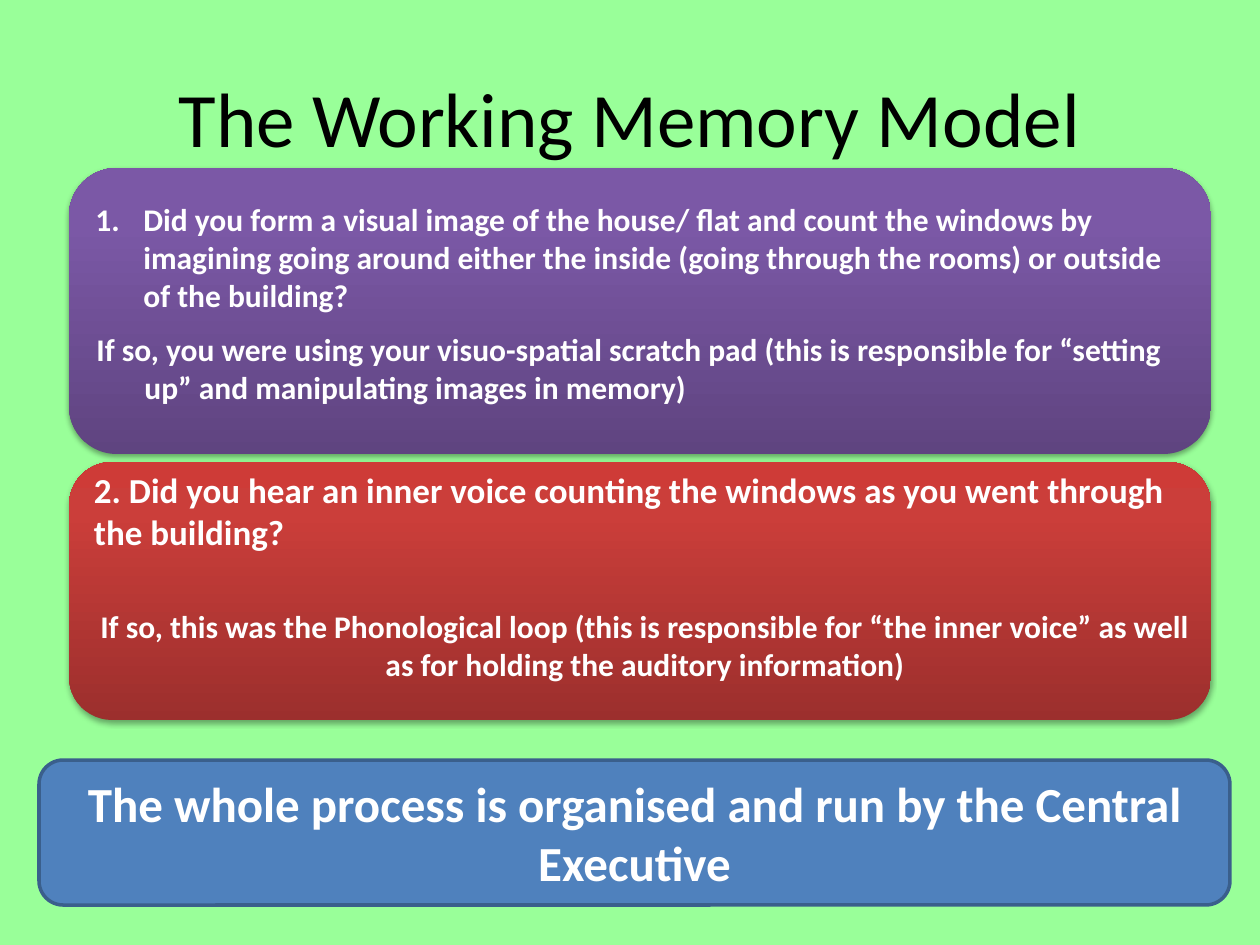
from copy import deepcopy

from lxml.etree import SubElement
from pptx import Presentation
from pptx.dml.color import RGBColor
from pptx.enum.shapes import MSO_SHAPE
from pptx.enum.text import MSO_ANCHOR, PP_ALIGN
from pptx.oxml.ns import qn
from pptx.util import Pt

EMU_PER_PX = 914400 / 126
COLORS = {
    "background": "99FF99",
    "title": "000000",
    "text": "FFFFFF",
    "shadow": "000000",
    "central": "4F81BD",
    "central_edge": "3A5F8C",
}
GRADIENTS = {
    "visual": ((0, "5F4480"), (0.8, "7B58A6"), (1, "7C57A8")),
    "sound": ((0, "9C2F2D"), (0.8, "CB3E3A"), (1, "CE3B37")),
}
HANGING = 48


def px(length):
    return round(length * EMU_PER_PX)


def rgb(name):
    return RGBColor.from_string(COLORS[name])


class MemorySlide:
    """Holds the style and the slide, and draws each kind of element."""

    def __init__(self, presentation):
        self.font = "Calibri"
        self.slide = presentation.slides.add_slide(presentation.slide_layouts[6])
        background = self.slide.background.fill
        background.solid()
        background.fore_color.rgb = rgb("background")

    def set_text(self, shape, text, size, align, color="text", bold=True,
                 anchor=MSO_ANCHOR.MIDDLE, hanging=0, numbered=False):
        frame = shape.text_frame
        frame.word_wrap = True
        frame.vertical_anchor = anchor
        paragraph = frame.paragraphs[0]
        paragraph.text = text
        paragraph.alignment = align
        font = paragraph.font
        font.name, font.size, font.bold = self.font, Pt(size), bold
        font.color.rgb = rgb(color)
        properties = paragraph._p.get_or_add_pPr()
        if hanging:
            properties.set("marL", str(px(hanging)))
            properties.set("indent", str(-px(hanging)))
        if numbered:
            number = SubElement(properties, qn("a:buAutoNum"), type="arabicPeriod")
            properties.remove(number)
            properties.insert_element_before(number, "a:defRPr")

    def text(self, box, text, size, align, **style):
        shape = self.slide.shapes.add_textbox(*map(px, box))
        self.set_text(shape, text, size, align, **style)

    def panel(self, box):
        shape = self.slide.shapes.add_shape(
            MSO_SHAPE.ROUNDED_RECTANGLE, *map(px, box))
        shape.shadow.inherit = False
        return shape

    def question(self, box, gradient, text, size, top, bottom, anchor, **style):
        shape = self.panel(box)
        shape.line.fill.background()
        self.shade(shape.fill, GRADIENTS[gradient])
        self.cast_shadow(shape)
        shape.text_frame.margin_top = px(top)
        shape.text_frame.margin_bottom = px(bottom)
        self.set_text(shape, text, size, PP_ALIGN.LEFT, anchor=anchor, **style)

    def shade(self, fill, stops):
        fill.gradient()
        fill.gradient_angle = 90
        last = fill.gradient_stops[-1]._gs
        last.addnext(deepcopy(last))
        for stop, (position, color) in zip(fill.gradient_stops, stops):
            stop.position = position
            stop.color.rgb = RGBColor.from_string(color)

    def cast_shadow(self, shape):
        effects = shape._element.spPr.find(qn("a:effectLst"))
        shadow = SubElement(
            effects, qn("a:outerShdw"), blurRad=str(Pt(3.1)), dist=str(Pt(1.8)),
            dir="5400000", rotWithShape="0")
        color = SubElement(shadow, qn("a:srgbClr"), val=COLORS["shadow"])
        SubElement(color, qn("a:alpha"), val="35000")

    def conclusion(self, box, text, size):
        shape = self.panel(box)
        shape.fill.solid()
        shape.fill.fore_color.rgb = rgb("central")
        shape.line.color.rgb = rgb("central_edge")
        shape.line.width = Pt(2)
        self.set_text(shape, text, size, PP_ALIGN.CENTER)


def main():
    presentation = Presentation()
    presentation.slide_width, presentation.slide_height = px(1260), px(945)
    memory = MemorySlide(presentation)
    memory.text((63, 38, 1134, 158), "The Working Memory Model", 44,
                PP_ALIGN.CENTER, color="title", bold=False)
    memory.question(
        (69, 168, 1142, 286), "visual",
        "Did you form a visual image of the house/ flat and count the windows by "
        "imagining going around either the inside (going through the rooms) or "
        "outside of the building?",
        18, 18, 6, MSO_ANCHOR.TOP, hanging=HANGING, numbered=True)
    memory.question(
        (69, 462, 1142, 258), "sound",
        "2. Did you hear an inner voice counting the windows as you went through "
        "the building?",
        20, 0, 161, MSO_ANCHOR.MIDDLE)
    memory.conclusion(
        (39, 760, 1191, 145),
        "The whole process is organised and run by the Central Executive", 28)
    memory.text(
        (84, 324, 1126, 89),
        "If so, you were using your visuo-spatial scratch pad (this is responsible "
        "for “setting up” and manipulating images in memory)",
        18, PP_ALIGN.LEFT, anchor=MSO_ANCHOR.TOP, hanging=HANGING)
    memory.text(
        (82, 601, 1126, 89),
        "If so, this was the Phonological loop (this is responsible for “the inner "
        "voice” as well as for holding the auditory information)",
        18, PP_ALIGN.CENTER, anchor=MSO_ANCHOR.TOP)
    presentation.save("out.pptx")


if __name__ == "__main__":
    main()
